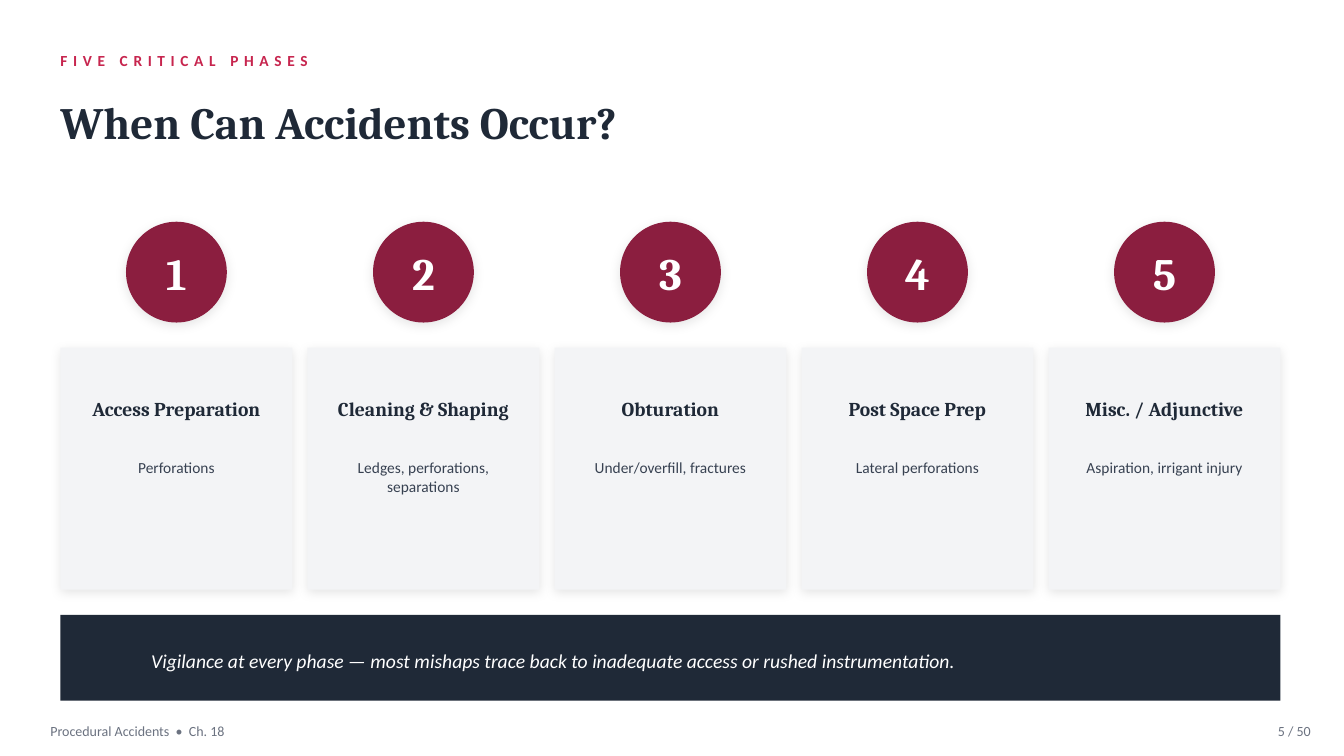
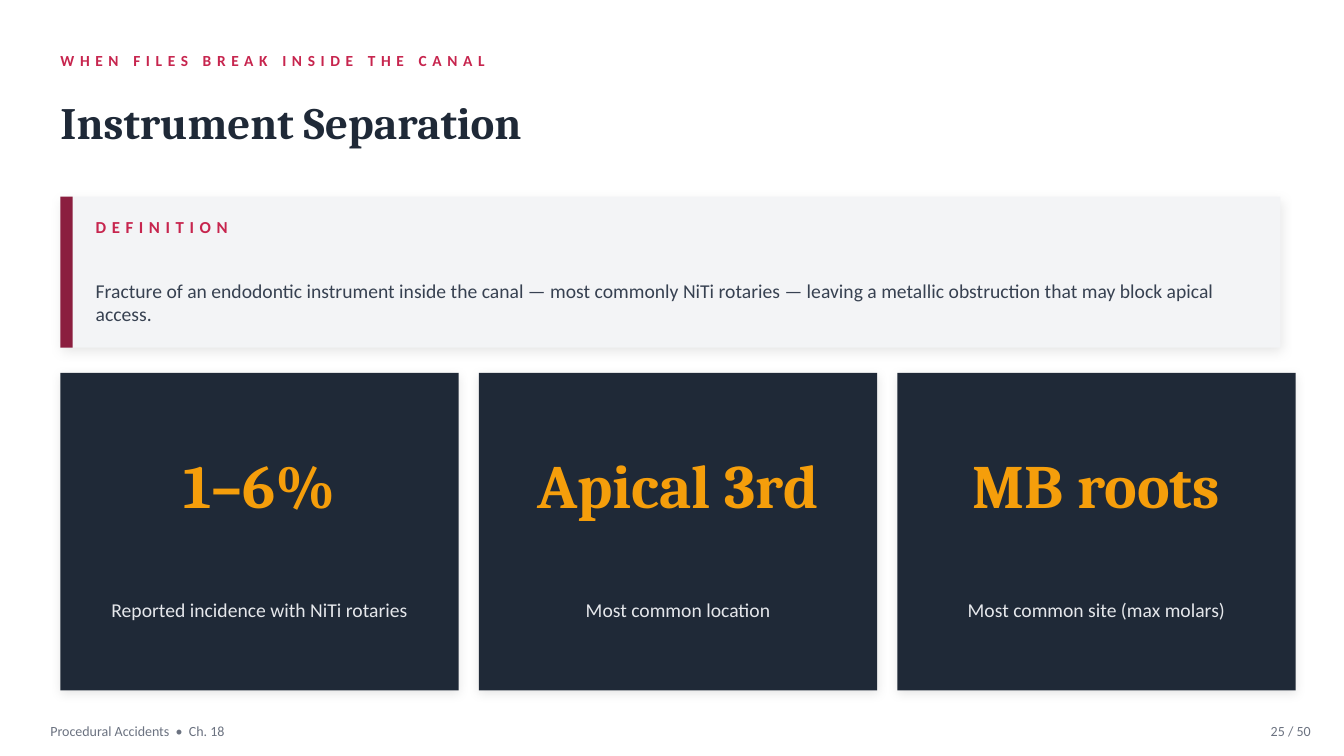
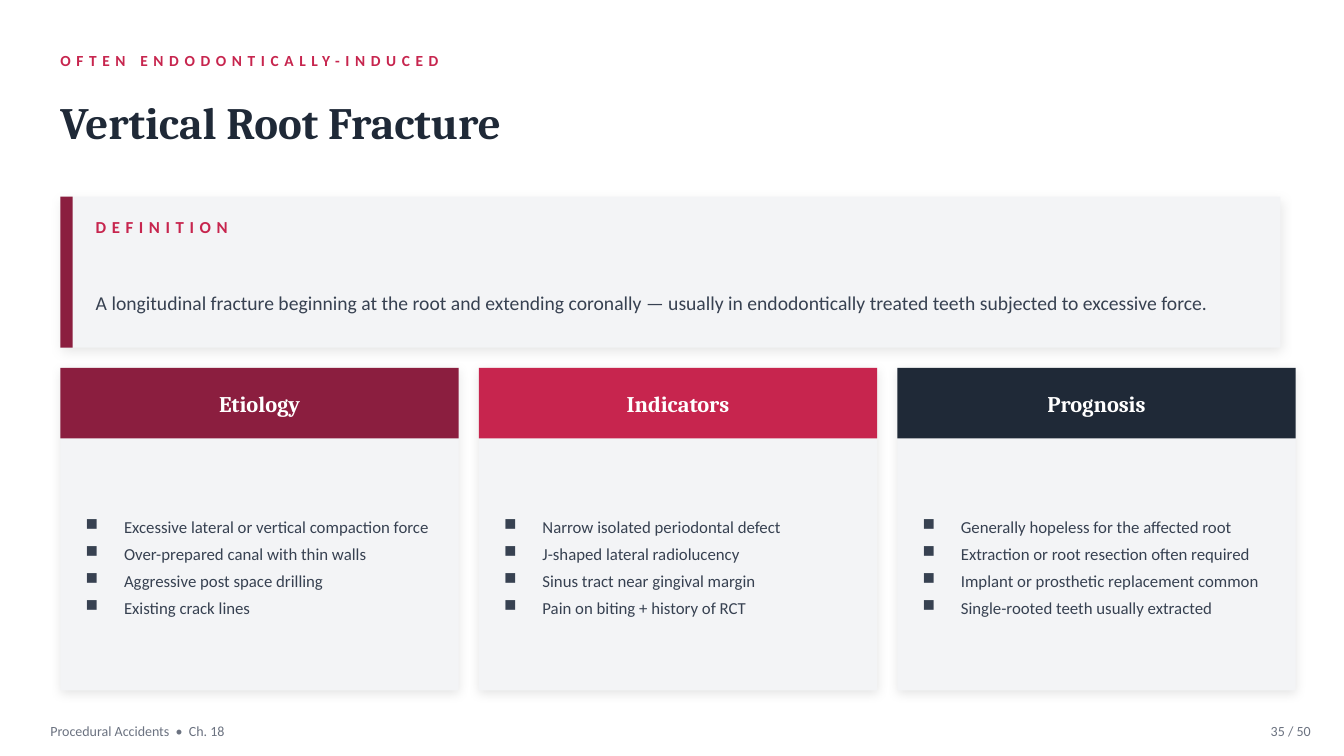
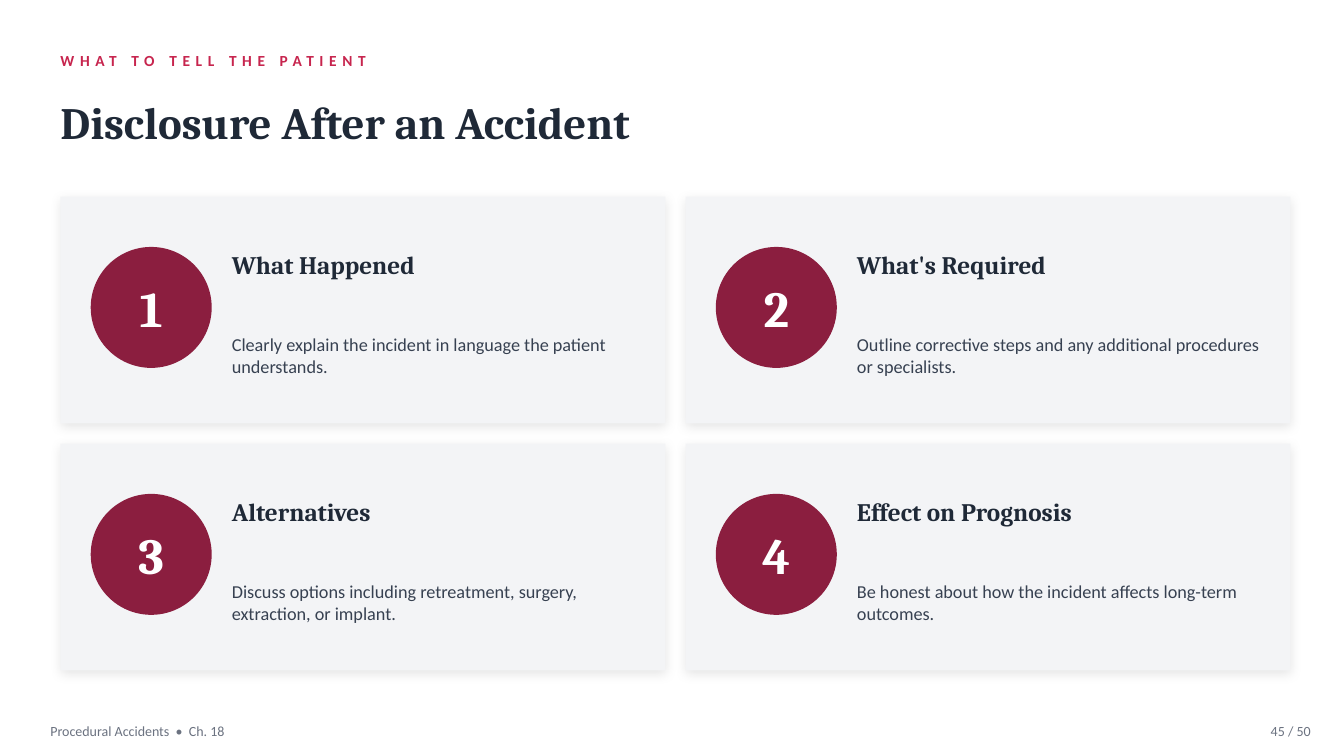
from lxml import etree
from pptx import Presentation
from pptx.dml.color import RGBColor
from pptx.enum.shapes import MSO_SHAPE
from pptx.enum.text import MSO_ANCHOR, MSO_AUTO_SIZE, PP_ALIGN
from pptx.oxml.ns import qn
from pptx.util import Inches, Pt

RECTANGLE, OVAL = MSO_SHAPE.RECTANGLE, MSO_SHAPE.OVAL
LEFT, CENTER, RIGHT = PP_ALIGN.LEFT, PP_ALIGN.CENTER, PP_ALIGN.RIGHT
TOP, MIDDLE = MSO_ANCHOR.TOP, MSO_ANCHOR.MIDDLE
NO_AUTOFIT = MSO_AUTO_SIZE.NONE

WINE, RED, NAVY = "8B1E3F", "C7254E", "1F2937"
AMBER, WHITE, PALE = "F59E0B", "FFFFFF", "F3F4F6"
BODY, MUTED, SILVER = "374151", "6B7280", "E5E7EB"
SANS, SERIF = "Calibri", "Cambria"

MARGIN = 0.6
CONTENT_WIDTH = 12.1
CONTENT_TOP = 1.95


def add_box(slide, left, top, width, height, fill=None, kind=RECTANGLE, shadow=False):
    """Add a filled shape, or a text box when no fill is given."""
    place = [Inches(length) for length in (left, top, width, height)]
    if fill is None:
        return slide.shapes.add_textbox(*place)
    shape = slide.shapes.add_shape(kind, *place)
    shape.fill.solid()
    shape.fill.fore_color.rgb = RGBColor.from_string(fill)
    shape.line.fill.background()
    shape.shadow.inherit = False
    if shadow:
        effects = shape.element.spPr.find(qn("a:effectLst"))
        outer = etree.SubElement(effects, qn("a:outerShdw"), blurRad=str(Pt(8)),
                                 dist=str(Pt(2)), dir="5400000", rotWithShape="0")
        black = etree.SubElement(outer, qn("a:srgbClr"), val="000000")
        etree.SubElement(black, qn("a:alpha"), val="10000")
    return shape


def write(shape, text, size, color, font=SANS, bold=False, italic=False,
          align=LEFT, anchor=MIDDLE, spacing=0, bullet=None):
    """Fill a shape with text, one paragraph per line."""
    frame = shape.text_frame
    frame.text = text
    frame.word_wrap = True
    frame.auto_size = NO_AUTOFIT
    frame.vertical_anchor = anchor
    frame.margin_left = frame.margin_right = frame.margin_top = frame.margin_bottom = 0
    for paragraph in frame.paragraphs:
        paragraph.alignment = align
        if bullet:
            paragraph.space_after = Pt(5)
            properties = paragraph._p.get_or_add_pPr()
            properties.set("marL", str(Inches(0.38)))
            properties.set("indent", str(-Inches(0.38)))
            etree.SubElement(properties, qn("a:buChar"), char=bullet)
        for run in paragraph.runs:
            run.font.name = font
            run.font.size = Pt(size)
            run.font.bold = bold
            run.font.italic = italic
            run.font.color.rgb = RGBColor.from_string(color)
            if spacing:
                run._r.get_or_add_rPr().set("spc", str(spacing * 100))


presentation = Presentation()
presentation.slide_width = Inches(13.33)
presentation.slide_height = Inches(7.5)
title_only = presentation.slide_layouts[5]

# Shared frame: kicker, title, footer and, on some slides, a definition
headings = [
    (5, "FIVE CRITICAL PHASES", "When Can Accidents Occur?", None),
    (25, "WHEN FILES BREAK INSIDE THE CANAL", "Instrument Separation",
     "Fracture of an endodontic instrument inside the canal — most commonly NiTi "
     "rotaries — leaving a metallic obstruction that may block apical access."),
    (35, "OFTEN ENDODONTICALLY-INDUCED", "Vertical Root Fracture",
     "A longitudinal fracture beginning at the root and extending coronally — usually "
     "in endodontically treated teeth subjected to excessive force."),
    (45, "WHAT TO TELL THE PATIENT", "Disclosure After an Accident", None),
]
slides = []
for page, kicker, heading, definition in headings:
    slide = presentation.slides.add_slide(title_only)
    slides.append(slide)
    title = slide.shapes.title
    title.left, title.top = Inches(MARGIN), Inches(0.78)
    title.width, title.height = Inches(12), Inches(0.85)
    write(title, heading, 32, NAVY, SERIF, bold=True)
    write(add_box(slide, MARGIN, 0.45, 12, 0.3), kicker, 11, RED, bold=True, spacing=4)
    write(add_box(slide, 12.3, 7.1, 0.7, 0.3), f"{page} / 50", 10, MUTED, align=RIGHT)
    write(add_box(slide, 0.5, 7.1, 5.5, 0.3), "Procedural Accidents  •  Ch. 18", 10, MUTED)
    if definition:
        add_box(slide, MARGIN, CONTENT_TOP, CONTENT_WIDTH, 1.5, PALE, shadow=True)
        add_box(slide, MARGIN, CONTENT_TOP, 0.12, 1.5, WINE)
        write(add_box(slide, 0.95, 2.1, 11, 0.3), "DEFINITION", 12, RED, bold=True, spacing=4)
        write(add_box(slide, 0.95, 2.5, 11.5, 1), definition, 14, BODY)

phases_slide, separation_slide, fracture_slide, disclosure_slide = slides

# Five phases: numbered circles above cards
phases = [
    ("Access Preparation", "Perforations"),
    ("Cleaning & Shaping", "Ledges, perforations, separations"),
    ("Obturation", "Under/overfill, fractures"),
    ("Post Space Prep", "Lateral perforations"),
    ("Misc. / Adjunctive", "Aspiration, irrigant injury"),
]
for index, (phase, accidents) in enumerate(phases):
    left = MARGIN + index * 2.45
    circle = add_box(phases_slide, left + 0.65, 2.2, 1, 1, WINE, OVAL, shadow=True)
    write(circle, str(index + 1), 32, WHITE, SERIF, bold=True, align=CENTER)
    add_box(phases_slide, left, 3.45, 2.3, 2.4, PALE, shadow=True)
    write(add_box(phases_slide, left + 0.15, 3.6, 2, 0.9), phase, 14, NAVY, SERIF,
          bold=True, align=CENTER)
    write(add_box(phases_slide, left + 0.15, 4.55, 2, 1.2), accidents, 11, BODY,
          align=CENTER, anchor=TOP)

# Closing message band
add_box(phases_slide, MARGIN, 6.1, CONTENT_WIDTH, 0.85, NAVY)
write(add_box(phases_slide, 1.5, 6.15, 11, 0.8),
      "Vigilance at every phase — most mishaps trace back to inadequate access "
      "or rushed instrumentation.", 14, WHITE, italic=True)

# Three columns shared by the separation and fracture slides
column_width = 3.95
column_lefts = [MARGIN + index * (column_width + 0.2) for index in range(3)]

# Separation: key figures
figures = [
    ("1–6%", "Reported incidence with NiTi rotaries"),
    ("Apical 3rd", "Most common location"),
    ("MB roots", "Most common site (max molars)"),
]
for left, (figure, caption) in zip(column_lefts, figures):
    add_box(separation_slide, left, 3.7, column_width, 3.15, NAVY, shadow=True)
    write(add_box(separation_slide, left + 0.2, 4.2, 3.55, 1.2), figure, 44, AMBER, SERIF,
          bold=True, align=CENTER)
    write(add_box(separation_slide, left + 0.2, 5.55, 3.55, 1), caption, 14, SILVER,
          align=CENTER)

# Fracture: bulleted columns with coloured headers
topics = [
    ("Etiology", WINE, ["Excessive lateral or vertical compaction force",
                        "Over-prepared canal with thin walls",
                        "Aggressive post space drilling",
                        "Existing crack lines"]),
    ("Indicators", RED, ["Narrow isolated periodontal defect",
                         "J-shaped lateral radiolucency",
                         "Sinus tract near gingival margin",
                         "Pain on biting + history of RCT"]),
    ("Prognosis", NAVY, ["Generally hopeless for the affected root",
                         "Extraction or root resection often required",
                         "Implant or prosthetic replacement common",
                         "Single-rooted teeth usually extracted"]),
]
for left, (topic, color, points) in zip(column_lefts, topics):
    add_box(fracture_slide, left, 3.65, column_width, 3.2, PALE, shadow=True)
    write(add_box(fracture_slide, left, 3.65, column_width, 0.7, color), topic, 16, WHITE,
          SERIF, bold=True, align=CENTER)
    write(add_box(fracture_slide, left + 0.25, 4.5, 3.55, 2.25), "\n".join(points), 12, BODY,
          bullet="■")

# Disclosure: two-by-two grid of numbered cards
steps = [
    ("What Happened", "Clearly explain the incident in language the patient understands."),
    ("What's Required",
     "Outline corrective steps and any additional procedures or specialists."),
    ("Alternatives", "Discuss options including retreatment, surgery, extraction, or implant."),
    ("Effect on Prognosis", "Be honest about how the incident affects long-term outcomes."),
]
card_width, card_height, card_gap = 6, 2.25, 0.2
for index, (step, advice) in enumerate(steps):
    row, column = divmod(index, 2)
    left = MARGIN + column * (card_width + card_gap)
    top = CONTENT_TOP + row * (card_height + card_gap)
    add_box(disclosure_slide, left, top, card_width, card_height, PALE, shadow=True)
    circle = add_box(disclosure_slide, left + 0.3, top + 0.5, 1.2, 1.2, WINE, OVAL)
    write(circle, str(index + 1), 36, WHITE, SERIF, bold=True, align=CENTER)
    write(add_box(disclosure_slide, left + 1.7, top + 0.4, 4.1, 0.55), step, 18, NAVY, SERIF,
          bold=True)
    write(add_box(disclosure_slide, left + 1.7, top + 1, 4.1, 1.15), advice, 13, BODY)

presentation.save("out.pptx")
